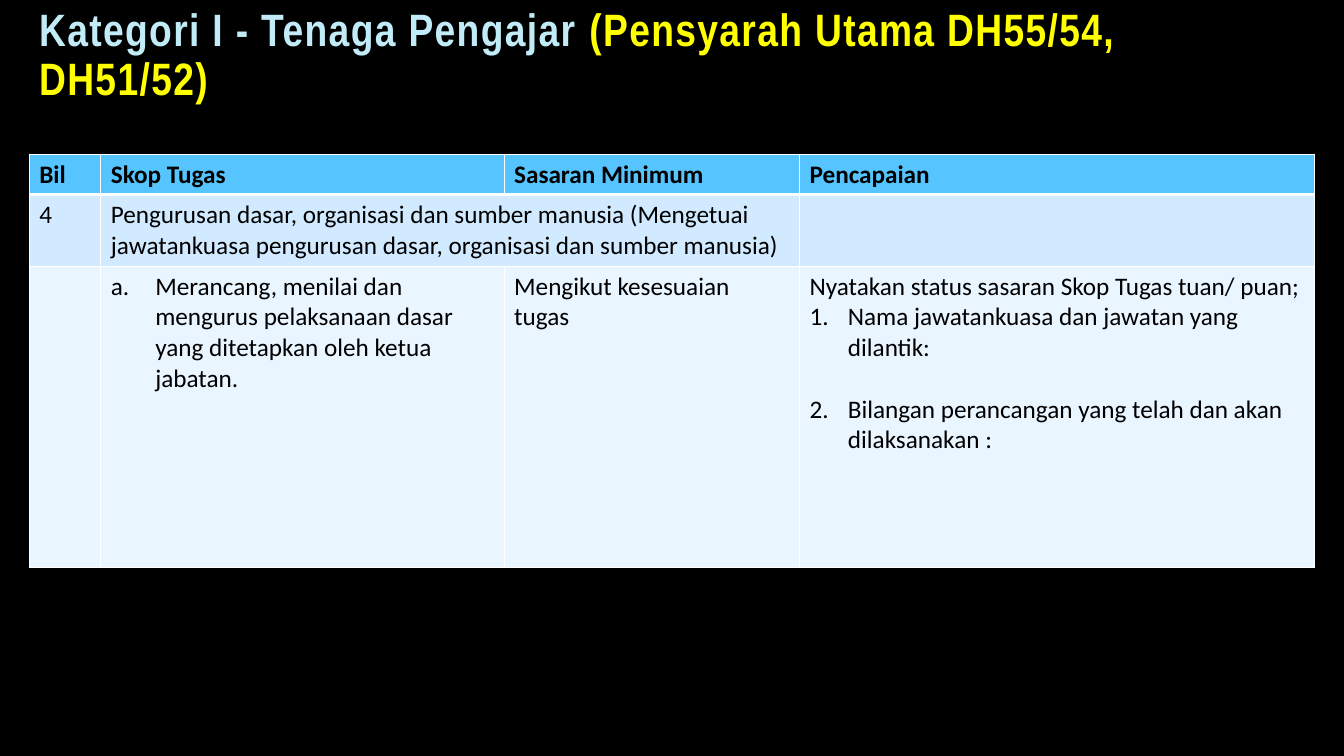
from lxml.etree import SubElement
from pptx import Presentation
from pptx.dml.color import RGBColor
from pptx.enum.text import MSO_ANCHOR
from pptx.oxml.ns import qn
from pptx.util import Inches, Pt

BLACK = RGBColor(0x00, 0x00, 0x00)
WHITE = RGBColor(0xFF, 0xFF, 0xFF)
PALE_CYAN = RGBColor(0xC1, 0xEB, 0xF7)
YELLOW = RGBColor(0xFF, 0xFF, 0x00)
OUTLINE = RGBColor(0x40, 0x40, 0x40)
HEADER_BLUE = RGBColor(0x56, 0xC5, 0xFF)
TASK_BLUE = RGBColor(0xD1, 0xEA, 0xFF)
DETAIL_BLUE = RGBColor(0xE9, 0xF5, 0xFF)

COLUMN_WIDTHS = [0.71, 4, 2.93, 5.11]
ROW_HEIGHTS = [0.4, 0.71, 2.99]
ROW_FILLS = [HEADER_BLUE, TASK_BLUE, DETAIL_BLUE]
HEADINGS = ["Bil", "Skop Tugas", "Sasaran Minimum", "Pencapaian"]
TASK = ("Pengurusan dasar, organisasi dan sumber manusia (Mengetuai "
        "jawatankuasa pengurusan dasar, organisasi dan sumber manusia)")
SCOPE = ("Merancang, menilai dan mengurus pelaksanaan dasar yang ditetapkan "
         "oleh ketua jabatan.")
STATUS = "Nyatakan status sasaran Skop Tugas tuan/ puan;"
ACHIEVEMENTS = ["Nama jawatankuasa dan jawatan yang dilantik:",
                "Bilangan perancangan yang telah dan akan dilaksanakan :"]
TITLE = [("Kategori I - Tenaga Pengajar ", PALE_CYAN),
         ("(Pensyarah Utama DH55/54, DH51/52)", YELLOW)]


def add_line(parent, tag, width, color, alpha=None):
    line = SubElement(parent, qn(tag), w=str(Pt(width)))
    fill = SubElement(line, qn("a:solidFill"))
    tint = SubElement(fill, qn("a:srgbClr"), val=str(color))
    if alpha:
        SubElement(tint, qn("a:alpha"), val=str(alpha * 1000))
    return line


def number(paragraph, style, indent):
    properties = paragraph._p.get_or_add_pPr()
    properties.set("marL", str(Inches(indent)))
    properties.set("indent", str(-Inches(indent)))
    SubElement(properties, qn("a:buFont"), typeface="+mj-lt")
    SubElement(properties, qn("a:buAutoNum"), type=style)


def write(paragraph, text, bold=False):
    paragraph.text = text
    font = paragraph.font
    font.name, font.size, font.bold = "Calibri", Pt(18), bold
    font.color.rgb = BLACK


def frame_cell(cell, fill, bottom_width, top_width):
    properties = cell._tc.get_or_add_tcPr()
    widths = {"a:lnL": 1, "a:lnR": 1, "a:lnT": top_width, "a:lnB": bottom_width}
    for tag, width in widths.items():
        add_line(properties, tag, width, WHITE)
    cell.fill.solid()
    cell.fill.fore_color.rgb = fill


def add_title(slide, left, top, width, height):
    box = slide.shapes.add_textbox(left, top, width, height)
    frame = box.text_frame
    frame.word_wrap = True
    frame.vertical_anchor = MSO_ANCHOR.BOTTOM
    paragraph = frame.paragraphs[0]
    paragraph.line_spacing = 0.9
    font = paragraph.font
    font.name, font.size, font.bold = "Arial Narrow", Pt(32.4), True
    for text, color in TITLE:
        run = paragraph.add_run()
        run.text = text
        properties = run._r.get_or_add_rPr()
        properties.set("spc", "100")
        add_line(properties, "a:ln", 0.75, OUTLINE, alpha=10)
        run.font.color.rgb = color


def add_task_table(slide, left, top, width, height):
    table = slide.shapes.add_table(
        len(ROW_HEIGHTS), len(COLUMN_WIDTHS), left, top, width, height).table
    table.first_row = table.horz_banding = False
    for column, column_width in zip(table.columns, COLUMN_WIDTHS):
        column.width = Inches(column_width)
    for index, (row, row_height) in enumerate(zip(table.rows, ROW_HEIGHTS)):
        row.height = Inches(row_height)
        for cell in row.cells:
            frame_cell(cell, ROW_FILLS[index],
                       bottom_width=3 if index == 0 else 1,
                       top_width=3 if index == 1 else 1)

    for cell, heading in zip(table.rows[0].cells, HEADINGS):
        cell.vertical_anchor = MSO_ANCHOR.MIDDLE
        write(cell.text_frame.paragraphs[0], heading, bold=True)

    table.cell(1, 1).merge(table.cell(1, 2))
    write(table.cell(1, 0).text_frame.paragraphs[0], "4")
    write(table.cell(1, 1).text_frame.paragraphs[0], TASK)

    scope = table.cell(2, 1).text_frame.paragraphs[0]
    number(scope, "alphaLcPeriod", 0.44)
    write(scope, SCOPE)
    write(table.cell(2, 2).text_frame.paragraphs[0], "Mengikut kesesuaian tugas")

    status = table.cell(2, 3).text_frame
    write(status.paragraphs[0], STATUS)
    for index, achievement in enumerate(ACHIEVEMENTS):
        paragraph = status.add_paragraph()
        number(paragraph, "arabicPeriod", 0.38)
        paragraph.space_before = Pt(22 * index)
        write(paragraph, achievement)


def main():
    deck = Presentation()
    deck.slide_width, deck.slide_height = Inches(13.33), Inches(7.5)
    slide = deck.slides.add_slide(deck.slide_layouts[6])
    slide.background.fill.solid()
    slide.background.fill.fore_color.rgb = BLACK
    add_title(slide, Inches(0.29), Inches(0.42), Inches(11.37), Inches(0.67))
    add_task_table(slide, Inches(0.29), Inches(1.53),
                   Inches(sum(COLUMN_WIDTHS)), Inches(sum(ROW_HEIGHTS)))
    deck.save("out.pptx")


if __name__ == "__main__":
    main()
